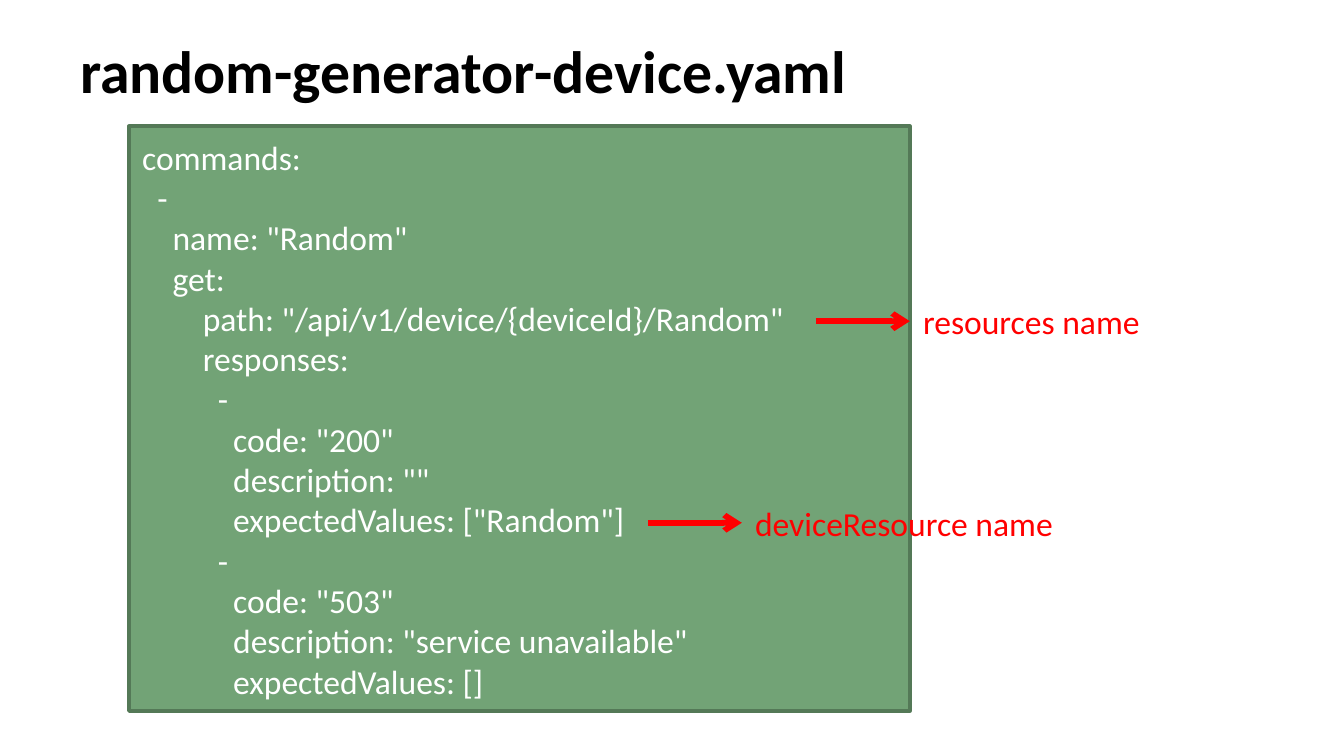
"""Build a slide that annotates the commands section of a device YAML file."""
from lxml import etree
from pptx import Presentation
from pptx.dml.color import RGBColor
from pptx.enum import shapes, text
from pptx.oxml.ns import qn
from pptx.util import Inches, Pt


def rgb(value):
    return RGBColor.from_string(value)


def write(sp, content, size, color, bold=False, anchor=text.MSO_ANCHOR.MIDDLE):
    tf = sp.text_frame
    tf.word_wrap = True
    tf.vertical_anchor = anchor
    tf.text = content
    for p in tf.paragraphs:
        p.alignment = text.PP_ALIGN.LEFT
        for r in p.runs:
            r.font.name = "Calibri"
            r.font.size = Pt(size)
            r.font.bold = bold
            r.font.color.rgb = rgb(color)


CODE = """commands:
  -
    name: "Random"
    get:
        path: "/api/v1/device/{deviceId}/Random"
        responses:
          -
            code: "200"
            description: ""
            expectedValues: ["Random"]
          -
            code: "503"
            description: "service unavailable"
            expectedValues: []"""

LABELS = [
    ("resources name", 6.77, 2.19, 2.35),
    ("deviceResource name", 5.52, 3.69, 2.54),
]
LABEL_HEIGHT = 0.4
ARROW_LENGTH = 0.7

prs = Presentation()
prs.slide_width = Inches(10)
prs.slide_height = Inches(10 * 9 / 16)
s = prs.slides.add_slide(prs.slide_layouts[6])

title = s.shapes.add_textbox(Inches(0.5), Inches(0.1), Inches(9), Inches(0.83))
write(title, "random-generator-device.yaml", 32, "000000", bold=True)

panel = s.shapes.add_shape(shapes.MSO_SHAPE.RECTANGLE,
                           Inches(0.96), Inches(0.94), Inches(5.81), Inches(4.35))
panel.shadow.inherit = False
panel.fill.solid()
panel.fill.fore_color.rgb = rgb("72A376")
panel.line.color.rgb = rgb("547957")
panel.line.width = Pt(2)
write(panel, CODE, 18, "FFFFFF")

for name, left, top, width in LABELS:
    label = s.shapes.add_textbox(Inches(left), Inches(top), Inches(width), Inches(LABEL_HEIGHT))
    write(label, name, 18, "FF0000", anchor=text.MSO_ANCHOR.TOP)
    label.text_frame.auto_size = text.MSO_AUTO_SIZE.SHAPE_TO_FIT_TEXT

    y = Inches(top + LABEL_HEIGHT / 2)
    arrow = s.shapes.add_connector(shapes.MSO_CONNECTOR.STRAIGHT,
                                   Inches(left - ARROW_LENGTH), y, Inches(left), y)
    arrow.end_connect(label, 1)
    arrow.line.color.rgb = rgb("FF0000")
    arrow.line.width = Pt(3)
    etree.SubElement(arrow.line._get_or_add_ln(), qn("a:tailEnd"), type="arrow")
    etree.SubElement(arrow._element.spPr, qn("a:effectLst"))

prs.save("out.pptx")
